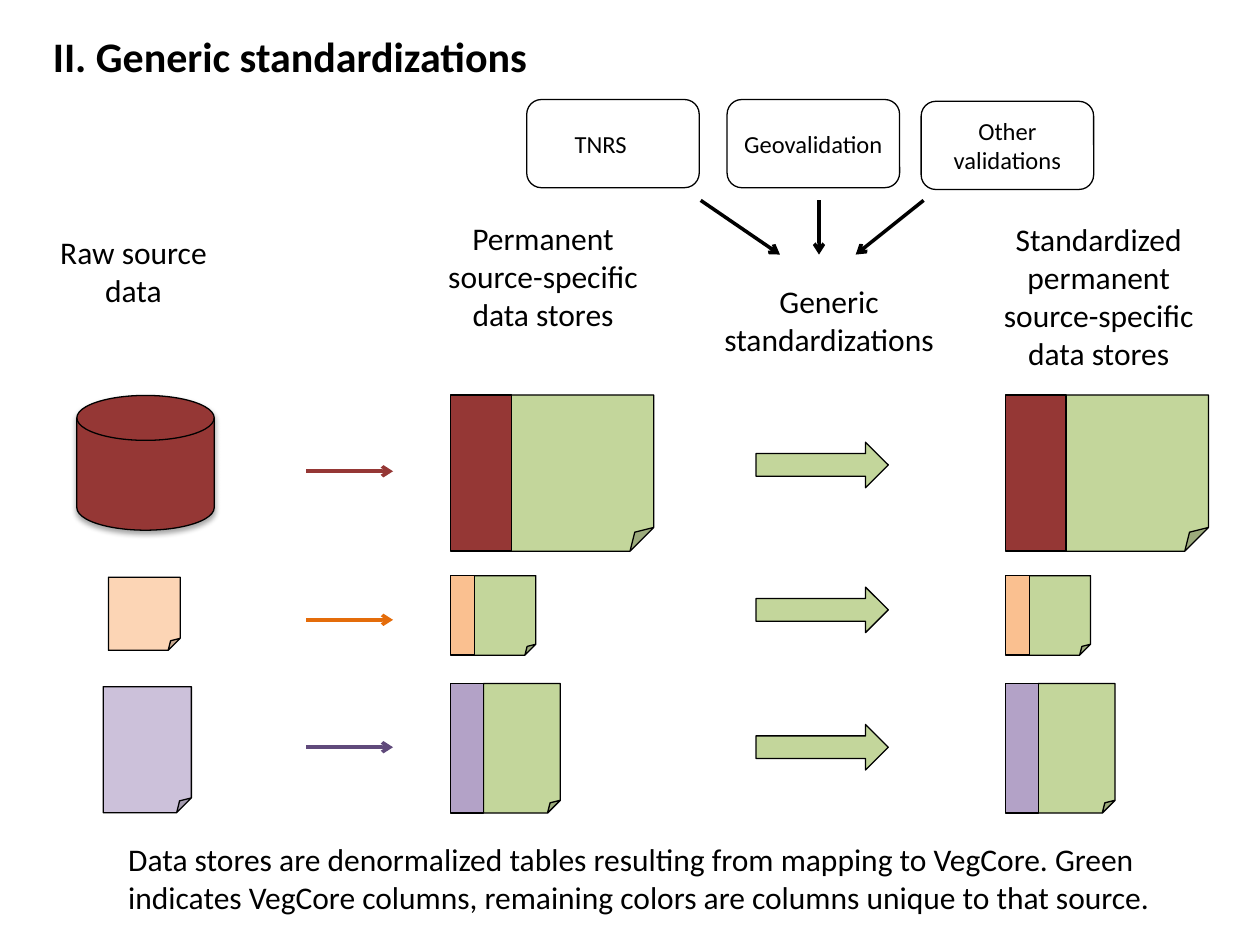
from lxml import etree
from pptx import Presentation
from pptx.dml.color import RGBColor
from pptx.enum.shapes import MSO_CONNECTOR, MSO_SHAPE as SHAPE
from pptx.enum.text import MSO_ANCHOR as ANCHOR, PP_ALIGN as ALIGN
from pptx.oxml.ns import qn
from pptx.util import Pt

COLORS = {
    "black": "000000", "red": "953735", "green": "C3D69B",
    "peach": "FCD5B5", "orange": "FAC090", "dark orange": "E46C0A",
    "lilac": "CCC1DA", "purple": "B3A2C7", "dark purple": "604A7B",
}
FONT = "Calibri"


def rgb(name):
    return RGBColor.from_string(COLORS[name])


def set_text(sp, text, size, align=ALIGN.CENTER, anchor=ANCHOR.TOP, bold=False):
    tf = sp.text_frame
    tf.word_wrap = True
    tf.vertical_anchor = anchor
    tf.text = text
    p = tf.paragraphs[0]
    p.alignment = align
    font = p.runs[0].font
    font.name, font.size, font.bold = FONT, Pt(size), bold
    font.color.rgb = rgb("black")


def add_label(s, box, text, align=ALIGN.CENTER):
    set_text(s.shapes.add_textbox(*map(Pt, box)), text, 18, align)


def add_block(shapes, kind, box, fill=None):
    """Add an outlined preset shape, hollow when no fill is named."""
    sp = shapes.add_shape(kind, *map(Pt, box))
    sp.shadow.inherit = False
    if fill:
        sp.fill.solid()
        sp.fill.fore_color.rgb = rgb(fill)
    else:
        sp.fill.background()
    sp.line.color.rgb = rgb("black")
    sp.line.width = Pt(0.75)
    return sp


def add_arrow(s, x1, y1, x2, y2, color="black"):
    line = s.shapes.add_connector(MSO_CONNECTOR.STRAIGHT, *map(Pt, (x1, y1, x2, y2)))
    line.line.color.rgb = rgb(color)
    line.line.width = Pt(2)
    etree.SubElement(line.line._get_or_add_ln(), qn("a:tailEnd"), type="arrow")
    etree.SubElement(line._element.spPr, qn("a:effectLst"))


def add_soft_shadow(sp):
    effects = sp._element.spPr.find(qn("a:effectLst"))
    shadow = etree.SubElement(effects, qn("a:outerShdw"), blurRad=str(Pt(3.1)),
                              dist=str(Pt(1.8)), dir="5400000", rotWithShape="0")
    color = etree.SubElement(shadow, qn("a:srgbClr"), val=COLORS["black"])
    etree.SubElement(color, qn("a:alpha"), val="35000")


def add_title(s, box, text):
    title = s.shapes.title
    title.left, title.top, title.width, title.height = map(Pt, box)
    set_text(title, text, 24, ALIGN.LEFT, ANCHOR.MIDDLE, bold=True)


def add_validations(s, left, top):
    """Add the validation boxes and the arrows converging below them."""
    group = s.shapes.add_group_shape()
    for dx, dy, text, right_inset in ((0, 0, "TNRS", 16), (114.5, 0, "Geovalidation", 2),
                                      (225.4, 1, "Other validations", 2)):
        sp = add_block(group.shapes, SHAPE.ROUNDED_RECTANGLE,
                       (left + dx, top + dy, 98.6, 50.4))
        set_text(sp, text, 14, anchor=ANCHOR.MIDDLE)
        sp.text_frame.margin_left = Pt(2)
        sp.text_frame.margin_right = Pt(right_inset)
    for start, end in ((99.4, 144.7), (167, 167), (226.8, 188)):
        add_arrow(s, left + start, top + 57.6, left + end, top + 88.6)


def add_store(s, left, top, size, strip, page_offset, color):
    """Add a green page whose left strip holds the source's own columns."""
    width, height = size
    group = s.shapes.add_group_shape()
    add_block(group.shapes, SHAPE.FOLDED_CORNER,
              (left + page_offset, top, width - page_offset, height), "green")
    add_block(group.shapes, SHAPE.RECTANGLE, (left, top, strip, height), color)


def add_source_row(s, top, source, arrow, block_y, store):
    """Add one source, its mapping arrow, both data stores and the block arrow."""
    kind, box, color = source
    raw = add_block(s.shapes, kind, box, color)
    if kind == SHAPE.FLOWCHART_MAGNETIC_DISK:
        add_soft_shadow(raw)
    arrow_y, arrow_color = arrow
    add_arrow(s, 175, arrow_y, 224.6, arrow_y, arrow_color)
    add_block(s.shapes, SHAPE.RIGHT_ARROW, (432, block_y, 75.6, 26), "green")
    for left in (257.6, 574.6):
        add_store(s, left, top, *store)


def main():
    prs = Presentation()
    prs.slide_width, prs.slide_height = Pt(720), Pt(540)
    s = prs.slides.add_slide(prs.slide_layouts[5])

    add_title(s, (23, 13.7, 658.8, 36), "II. Generic standardizations")
    add_validations(s, 301, 56.9)

    for box, text in (
        ((25.2, 129.6, 102.2, 51), "Raw source data"),
        ((247.7, 121.7, 125.3, 72.7), "Permanent source-specific data stores"),
        ((392.4, 157.7, 162.7, 51), "Generic standardizations"),
        ((565.2, 122.4, 125.3, 94.3), "Standardized permanent source-specific data stores"),
    ):
        add_label(s, box, text)

    rows = (
        (225.7, (SHAPE.FLOWCHART_MAGNETIC_DISK, (43.9, 226, 78.5, 77), "red"),
         (269.3, "red"), 252.7, ((116, 89.3), 34.6, 34.6, "red")),
        (329, (SHAPE.FOLDED_CORNER, (62, 329.8, 41, 41.8), "peach"),
         (354.2, "dark orange"), 335.5, ((48.6, 45.4), 13.7, 11.2, "orange")),
        (390.6, (SHAPE.FOLDED_CORNER, (59, 392.4, 50.4, 72), "lilac"),
         (427, "dark purple"), 414, ((62.6, 74), 18.7, 18.7, "purple")),
    )
    for row in rows:
        add_source_row(s, *row)

    add_label(s, (66.2, 476.6, 639.4, 51),
              "Data stores are denormalized tables resulting from mapping to VegCore. "
              "Green indicates VegCore columns, remaining colors are columns unique "
              "to that source.", ALIGN.LEFT)
    prs.save("out.pptx")


if __name__ == "__main__":
    main()
